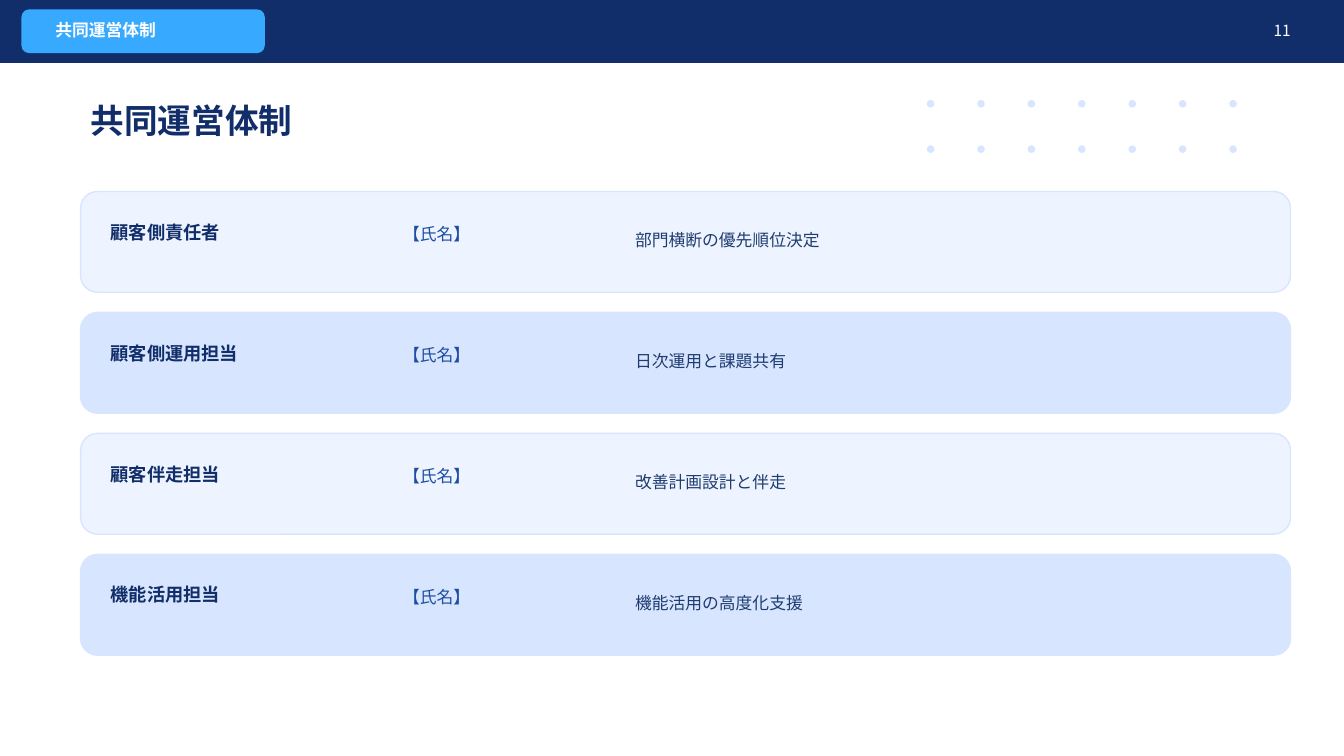
from lxml import etree
from pptx import Presentation
from pptx.dml.color import RGBColor
from pptx.enum.lang import MSO_LANGUAGE_ID
from pptx.enum.shapes import MSO_SHAPE
from pptx.enum.text import MSO_ANCHOR, MSO_AUTO_SIZE, PP_ALIGN
from pptx.oxml.ns import qn
from pptx.util import Inches, Pt

NAVY = RGBColor(0x11, 0x2E, 0x6A)
SKY = RGBColor(0x37, 0xA9, 0xFF)
PALE = RGBColor(0xEE, 0xF4, 0xFF)
LIGHT = RGBColor(0xD8, 0xE5, 0xFF)
BLUE = RGBColor(0x1D, 0x4E, 0xA3)
INK = RGBColor(0x1F, 0x3C, 0x70)
WHITE = RGBColor(0xFF, 0xFF, 0xFF)
JP_FONT = "Noto Sans CJK JP"
WIDTH, HEIGHT = 13.33, 7.5

ROLES = [
    ("顧客側責任者", "【氏名】", "部門横断の優先順位決定"),
    ("顧客側運用担当", "【氏名】", "日次運用と課題共有"),
    ("顧客伴走担当", "【氏名】", "改善計画設計と伴走"),
    ("機能活用担当", "【氏名】", "機能活用の高度化支援"),
]


def write(sp, text, size=12, color=WHITE, bold=False, font=JP_FONT, align=PP_ALIGN.LEFT):
    tf = sp.text_frame
    tf.word_wrap = True
    tf.auto_size = MSO_AUTO_SIZE.NONE
    tf.vertical_anchor = MSO_ANCHOR.MIDDLE
    p = tf.paragraphs[0]
    p.alignment = align
    r = p.add_run()
    r.text = text
    r.font.size, r.font.bold, r.font.name = Pt(size), bold, font
    r.font.color.rgb = color
    r.font.language_id = MSO_LANGUAGE_ID.JAPANESE
    etree.SubElement(r.font._element, qn("a:ea"), typeface=JP_FONT)


def add_text(s, box, text, **fmt):
    write(s.shapes.add_textbox(*map(Inches, box)), text, **fmt)


def add_panel(s, kind, box, fill, line=None):
    sp = s.shapes.add_shape(kind, *map(Inches, box))
    sp.shadow.inherit = False
    sp.fill.solid()
    sp.fill.fore_color.rgb = fill
    sp.line.color.rgb = line or fill
    sp.line.width = Pt(1)


def add_dots(s, x, y, columns=7, rows=2, dx=0.5, dy=0.45, size=0.06):
    for row in range(rows):
        for col in range(columns):
            add_panel(s, MSO_SHAPE.OVAL, (x + col * dx, y + row * dy, size, size), LIGHT)


def add_header(s, width, height, section, number):
    text_y, text_h = 0.18, 0.24
    add_panel(s, MSO_SHAPE.RECTANGLE, (0, 0, width, height), NAVY)
    add_panel(s, MSO_SHAPE.ROUNDED_RECTANGLE, (0.22, 0.1, 2.4, height - 0.2), SKY)
    add_text(s, (0.45, text_y, 8.8, text_h), section, bold=True)
    add_text(s, (width - 1.18, text_y, 0.75, text_h), number, size=11, align=PP_ALIGN.RIGHT)


def add_title(s, box, text):
    sp = s.shapes.title
    sp.left, sp.top, sp.width, sp.height = map(Inches, box)
    write(sp, text, size=24, color=NAVY, bold=True, font="Lato")


def add_role(s, box, role, fill):
    x, y, w, h = box
    duty, person, task = role
    add_panel(s, MSO_SHAPE.ROUNDED_RECTANGLE, box, fill, LIGHT)
    add_text(s, (x + 0.2, y + 0.28, 2.7, 0.24), duty, size=13, color=NAVY, bold=True)
    add_text(s, (x + 3.1, y + 0.3, 2.1, 0.24), person, color=BLUE)
    add_text(s, (x + 5.4, y + 0.25, w - 5.8, 0.45), task, color=INK)


def add_roles(s, x, y, w, row_h=1, gap=0.2):
    for i, role in enumerate(ROLES):
        add_role(s, (x, y + i * (row_h + gap), w, row_h), role, (PALE, LIGHT)[i % 2])


def main():
    prs = Presentation()
    prs.slide_width, prs.slide_height = Inches(WIDTH), Inches(HEIGHT)
    s = prs.slides.add_slide(prs.slide_layouts[5])
    add_dots(s, 9.2, 1)
    add_header(s, WIDTH, 0.62, "共同運営体制", "11")
    add_title(s, (0.8, 0.95, 11.4, 0.48), "共同運営体制")
    add_roles(s, 0.8, 1.9, 12)
    prs.save("out.pptx")


if __name__ == "__main__":
    main()
